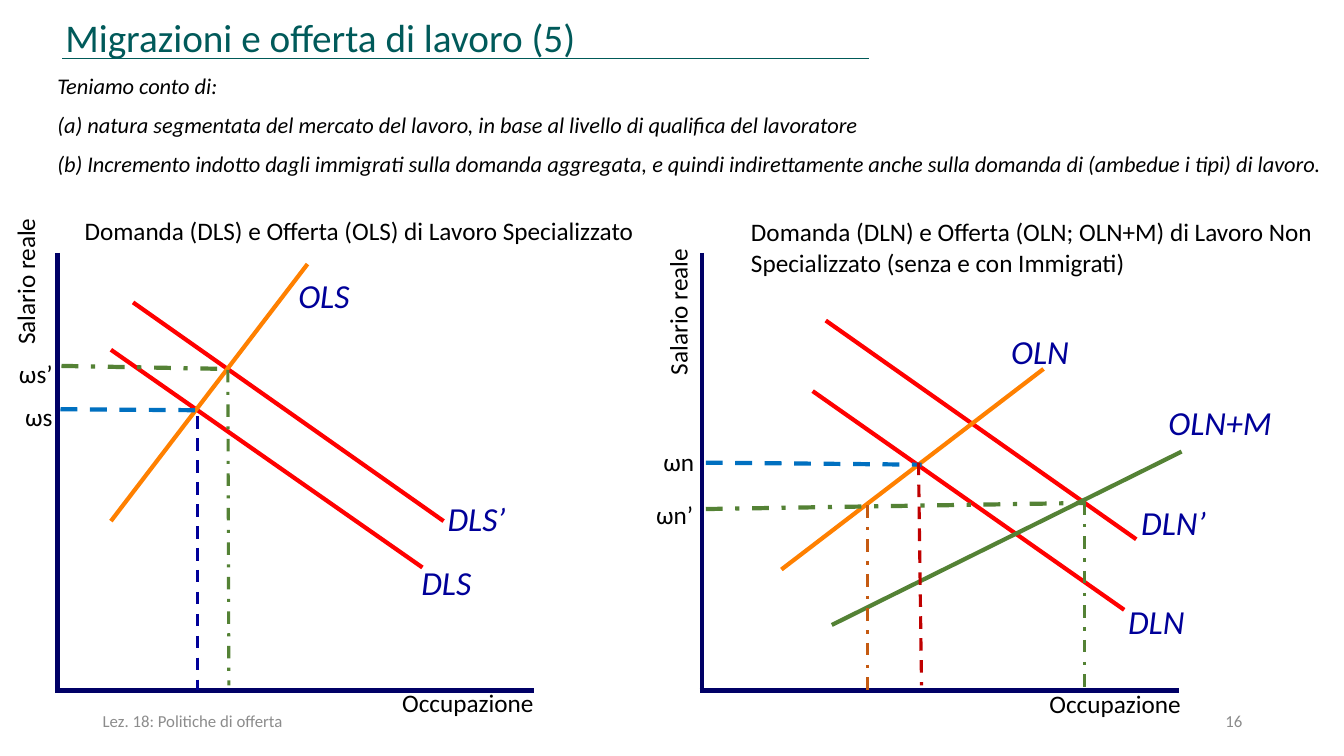
"""Build the slide on migration and labour supply with two labour market diagrams."""
from pptx import Presentation
from pptx.dml.color import RGBColor
from pptx.enum.dml import MSO_LINE_DASH_STYLE as Dash
from pptx.enum.shapes import MSO_CONNECTOR as Connector
from pptx.enum.text import MSO_ANCHOR as Anchor, MSO_AUTO_SIZE as AutoSize, PP_ALIGN as Align
from pptx.oxml.ns import qn
from pptx.util import Inches, Pt
from lxml.etree import SubElement

COLORS = {
    "rule": "005A58", "title": "005A5A", "footer": "8C8C8C", "text": "000000",
    "axis": "000066", "label": "000099", "demand": "FF0000", "supply": "FF8000",
    "green": "548235", "blue": "0070C0", "crimson": "C00000", "rust": "C55A11",
}

STYLES = {
    "title": {"size": Pt(28), "color": "title"},
    "footer": {"size": Pt(12), "color": "footer"},
    "intro": {"size": Pt(16), "color": "text", "italic": True},
    "caption": {"size": Pt(18), "color": "text"},
    "curve": {"size": Pt(24), "color": "label", "italic": True},
}

INTRO = [
    "Teniamo conto di:",
    "(a) natura segmentata del mercato del lavoro, in base al livello di qualifica del lavoratore",
    "(b) Incremento indotto dagli immigrati sulla domanda aggregata, e quindi indirettamente "
    "anche sulla domanda di (ambedue i tipi) di lavoro.",
]

PANELS = [
    {
        "axis_x": 0.57,
        "heading": ("Domanda (DLS) e Offerta (OLS) di Lavoro Specializzato", 0.74, 2.09, 0.4),
        "wage_axis": (0.05, 2),
        "job_axis": (3.89, 6.77),
        "curves": [
            ((1.32, 3), (4.4, 5.17), "demand"),
            ((1.1, 3.47), (4.19, 5.63), "demand"),
            ((1.1, 5.17), (3.05, 2.62), "supply"),
        ],
        "curve_names": [("DLS’", 4.34, 4.89, 0.95), ("DLS", 4.08, 5.53, 0.95),
                        ("OLS", 2.86, 2.68, 0.95)],
        "wages": [("ωs", 0.15, 3.93, 0.48), ("ωs’", 0.09, 3.51, 0.54)],
        "wage_guides": [
            ((0.6, 4.06), (1.96, 4.07), "blue", Dash.DASH),
            ((0.61, 3.63), (2.23, 3.66), "green", Dash.DASH_DOT),
        ],
        "job_guides": [
            ((1.96, 4.13), (1.96, 6.85), "label", Dash.DASH),
            ((2.26, 3.67), (2.27, 6.8), "green", Dash.DASH_DOT),
        ],
    },
    {
        "axis_x": 6.96,
        "heading": ("Domanda (DLN) e Offerta (OLN; OLN+M) di Lavoro Non Specializzato "
                    "(senza e con Immigrati)", 7.35, 2.1, 0.71),
        "wage_axis": (6.52, 2.3),
        "job_axis": (10.31, 6.78),
        "curves": [
            ((8.06, 3.88), (11.15, 6.05), "demand"),
            ((8.19, 3.18), (11.27, 5.35), "demand"),
            ((7.75, 5.65), (10.35, 3.66), "supply"),
            ((8.25, 6.2), (11.72, 4.48), "green"),
        ],
        "curve_names": [("DLN", 11.09, 5.91, 0.95), ("DLN’", 11.22, 4.93, 0.95),
                        ("OLN+M", 11.49, 3.94, 1.37), ("OLN", 9.93, 3.23, 1.37)],
        "wages": [("ωn", 6.48, 4.38, 0.51), ("ωn’", 6.41, 4.9, 0.57)],
        "wage_guides": [
            ((7, 4.59), (9.14, 4.61), "blue", Dash.DASH),
            ((7, 5.05), (10.76, 4.99), "green", Dash.DASH_DOT),
        ],
        "job_guides": [
            ((9.11, 4.59), (9.14, 6.8), "crimson", Dash.DASH),
            ((10.76, 4.98), (10.76, 6.84), "green", Dash.DASH_DOT),
            ((8.6, 5.01), (8.6, 6.88), "rust", Dash.DASH_DOT),
        ],
    },
]

AXIS_TOP, AXIS_BOTTOM, AXIS_LENGTH, AXIS_OVERLAP = 2.51, 6.85, 4.73, 0.02


def add_line(slide, start, end, color, width=3, dash=None):
    connector = slide.shapes.add_connector(
        Connector.STRAIGHT, *(Inches(v) for v in (*start, *end)))
    connector.line.color.rgb = RGBColor.from_string(COLORS[color])
    connector.line.width = Pt(width)
    if dash is not None:
        connector.line.dash_style = dash
    SubElement(connector._element.spPr, qn("a:effectLst"))


def add_text(slide, lines, box, style, frame_format=None, paragraph_format=None, vertical=False):
    frame = slide.shapes.add_textbox(*(Inches(v) for v in box)).text_frame
    settings = {"word_wrap": True, "auto_size": AutoSize.SHAPE_TO_FIT_TEXT}
    for key, value in {**settings, **(frame_format or {})}.items():
        setattr(frame, key, value)
    if vertical:
        frame._txBody.bodyPr.set("vert", "vert270")
    for index, line in enumerate(lines):
        paragraph = frame.add_paragraph() if index else frame.paragraphs[0]
        for key, value in (paragraph_format or {}).items():
            setattr(paragraph, key, value)
        run = paragraph.add_run()
        run.text = line
        run.font.name = "Calibri"
        for key, value in STYLES[style].items():
            if key == "color":
                run.font.color.rgb = RGBColor.from_string(COLORS[value])
            else:
                setattr(run.font, key, value)


def add_panel(slide, panel):
    x = panel["axis_x"]
    left = x - AXIS_OVERLAP
    add_line(slide, (x, AXIS_TOP), (x, AXIS_BOTTOM), "axis")
    add_line(slide, (left, AXIS_BOTTOM), (x + AXIS_LENGTH, AXIS_BOTTOM), "axis")
    for start, end, color in panel["curves"]:
        add_line(slide, start, end, color)
    for name, *place in panel["curve_names"]:
        add_text(slide, [name], (*place, 0.5), "curve")
    heading, heading_x, heading_y, height = panel["heading"]
    add_text(slide, [heading], (heading_x, heading_y, 5.98, height), "caption")
    add_text(slide, ["Salario reale"], (*panel["wage_axis"], 0.5, 1.52), "caption", vertical=True)
    add_text(slide, ["Occupazione"], (*panel["job_axis"], 1.77, 0.4), "caption")
    for start, end, color, dash in panel["wage_guides"]:
        add_line(slide, start, end, color, 3, dash)
    for wage, *place in panel["wages"]:
        add_text(slide, [wage], (*place, 0.4), "caption", {"word_wrap": False})
    for start, end, color, dash in panel["job_guides"]:
        add_line(slide, start, end, color, 2.25, dash)


def main():
    deck = Presentation()
    deck.slide_width, deck.slide_height = Inches(13.33), Inches(7.5)
    slide = deck.slides.add_slide(deck.slide_layouts[6])
    footer_frame = {"auto_size": AutoSize.NONE, "vertical_anchor": Anchor.MIDDLE}

    add_line(slide, (0.62, 0.58), (8.62, 0.58), "rule", 0.5)
    add_text(slide, ["16"], (9.42, 6.95, 3, 0.4), "footer", footer_frame,
             {"alignment": Align.RIGHT})
    add_text(slide, ["Migrazioni e offerta di lavoro (5)"], (0.55, 0.08, 9.54, 0.57), "title")
    add_text(slide, ["Lez. 18: Politiche di offerta"], (0.92, 6.95, 3.48, 0.4), "footer",
             footer_frame)
    add_text(slide, INTRO, (0.47, 0.63, 12.86, 1.19), "intro",
             paragraph_format={"line_spacing": 1.14, "space_before": Pt(6)})
    for panel in PANELS:
        add_panel(slide, panel)
    deck.save("out.pptx")


if __name__ == "__main__":
    main()
